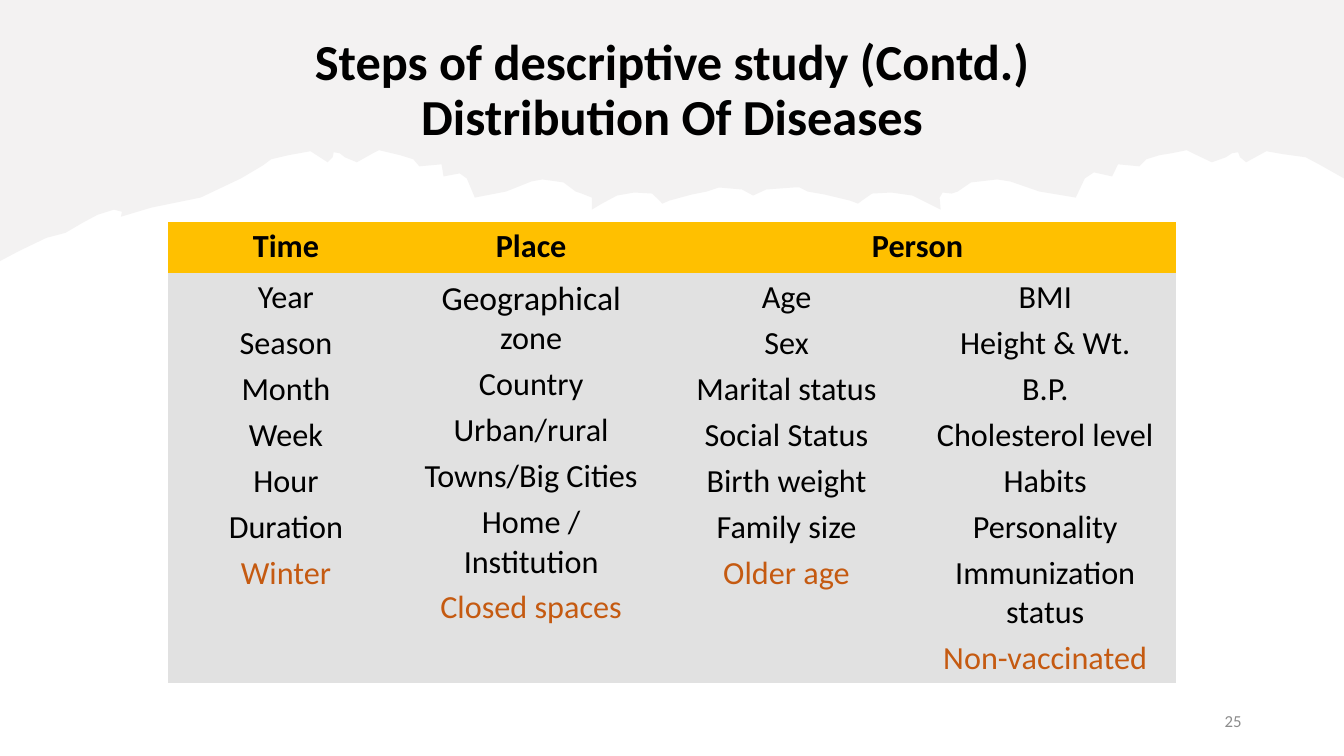
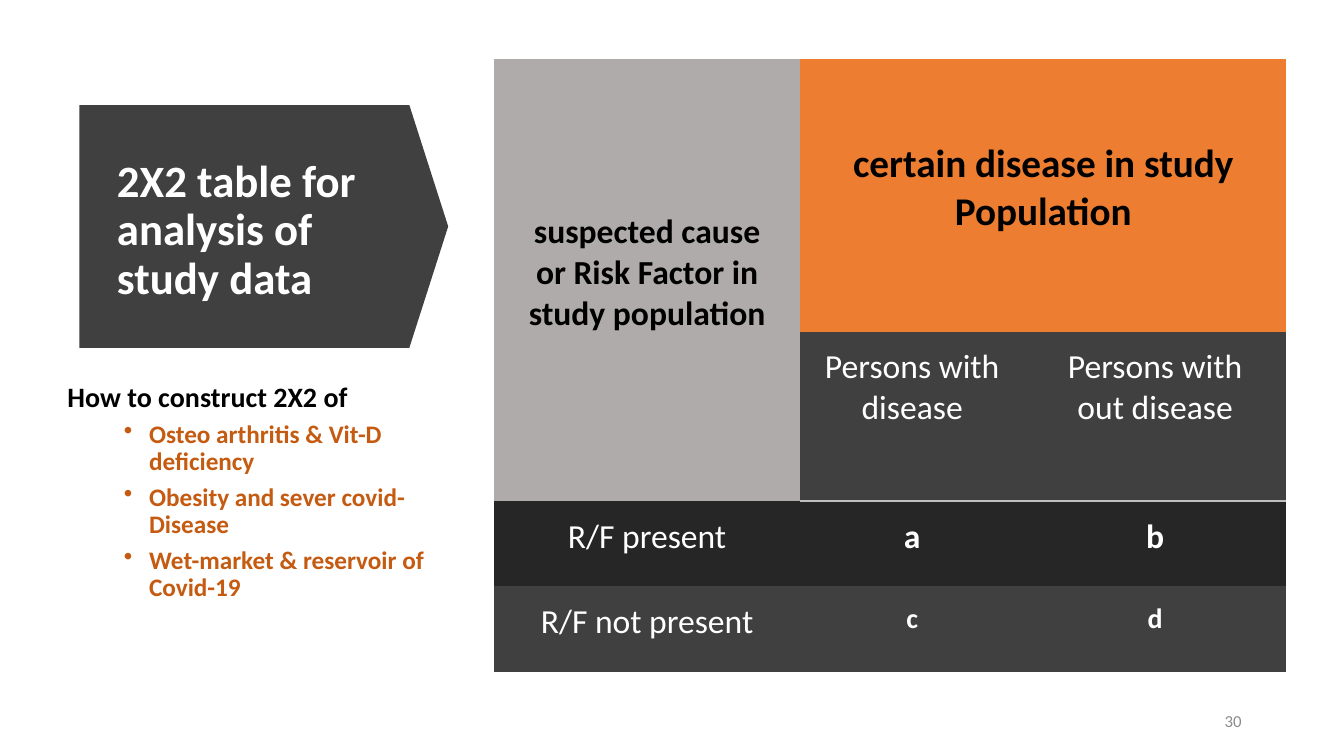
import pptx
import pptx.dml.color
import pptx.enum.shapes
import pptx.enum.text
import pptx.oxml
import pptx.oxml.ns
import pptx.util

RGBColor = pptx.dml.color.RGBColor
BLACK = RGBColor(0x00, 0x00, 0x00)
WHITE = RGBColor(0xFF, 0xFF, 0xFF)
MIST = RGBColor(0xF3, 0xF2, 0xF2)
SILVER = RGBColor(0xE1, 0xE1, 0xE1)
WARM_GREY = RGBColor(0xAF, 0xAB, 0xAB)
NUMBER_GREY = RGBColor(0x8C, 0x8C, 0x8C)
CHARCOAL = RGBColor(0x40, 0x40, 0x40)
COAL = RGBColor(0x26, 0x26, 0x26)
RULE_GREY = RGBColor(0xBF, 0xBF, 0xBF)
GOLD = RGBColor(0xFF, 0xC0, 0x00)
ORANGE = RGBColor(0xED, 0x7D, 0x31)
RUST = RGBColor(0xC5, 0x5A, 0x11)

FONT = "Calibri"
LEFT = pptx.enum.text.PP_ALIGN.LEFT
CENTER = pptx.enum.text.PP_ALIGN.CENTER
RIGHT = pptx.enum.text.PP_ALIGN.RIGHT
TOP = pptx.enum.text.MSO_ANCHOR.TOP
MIDDLE = pptx.enum.text.MSO_ANCHOR.MIDDLE
NO_TABLE_STYLE = "{2D5ABB26-0587-4C30-8999-92F81FD0307C}"

deck = pptx.Presentation()
deck.slide_width = pptx.util.Inches(13.33)
deck.slide_height = pptx.util.Inches(7.5)
title_only = deck.slide_layouts[5]


def area(left, top, width, height):
    """Turn percentages of the slide's size into lengths."""
    across, down = deck.slide_width / 100, deck.slide_height / 100
    return [pptx.util.Emu(round(share * unit)) for share, unit in
            ((left, across), (top, down), (width, across), (height, down))]


def write(frame, lines, size, colour, bold=False, align=LEFT, spacing=1.0):
    frame.text = "\n".join(lines)
    for para in frame.paragraphs:
        para.alignment = align
        para.line_spacing = spacing
        para.font.name = FONT
        para.font.size = pptx.util.Pt(size)
        para.font.bold = bold
        para.font.color.rgb = colour


# Titles and slide numbers
pages = []
for heading, place, size, colour, align, number in (
    ("Steps of descriptive study (Contd.)\vDistribution Of Diseases",
     (6.9, 5.33, 86.25, 13.6), 36, BLACK, CENTER, "25"),
    ("2X2 table for analysis of study data",
     (7.95, 17.6, 21.9, 26), 32, WHITE, LEFT, "30"),
):
    page = deck.slides.add_slide(title_only)
    title = page.shapes.title
    title.left, title.top, title.width, title.height = area(*place)
    write(title.text_frame, [heading], size, colour, True, align, 0.9)
    title.text_frame.word_wrap = True
    title.text_frame.auto_size = pptx.enum.text.MSO_AUTO_SIZE.NONE
    title.text_frame.vertical_anchor = MIDDLE

    box = page.shapes.add_textbox(*area(70.63, 92.67, 22.5, 5.33))
    write(box.text_frame, [number], 12, NUMBER_GREY, align=RIGHT)
    box.text_frame.word_wrap = True
    box.text_frame.vertical_anchor = MIDDLE
    pages.append(page)
disease_page, analysis_page = pages

# Torn paper edge, in hundredths of an inch
TORN_EDGE = [
    (19, 249), (46, 236), (65, 231), (82, 221), (97, 213), (113, 208),
    (121, 210), (120, 215), (150, 206), (199, 196), (239, 177), (261, 164),
    (269, 158), (286, 154), (308, 150), (325, 161), (330, 156), (331, 151),
    (337, 152), (342, 156), (354, 161), (370, 152), (376, 149), (397, 154),
    (410, 158), (416, 165), (438, 163), (440, 175), (456, 172), (463, 177),
    (471, 196), (502, 190), (527, 180), (538, 178), (559, 181), (571, 190),
    (577, 192), (587, 196), (587, 208), (597, 202), (612, 194), (629, 191),
    (647, 192), (654, 199), (657, 202), (664, 199), (686, 193), (701, 190),
    (713, 186), (736, 188), (747, 194), (760, 188), (787, 186), (793, 186),
    (801, 190), (818, 193), (843, 199), (851, 202), (855, 199), (865, 192),
    (884, 191), (905, 194), (921, 202), (933, 208), (932, 196), (935, 191),
    (944, 192), (950, 190), (963, 181), (989, 178), (1002, 180), (1031, 190),
    (1067, 196), (1076, 177), (1085, 171), (1103, 175), (1109, 163),
    (1130, 165), (1137, 158), (1150, 154), (1162, 152), (1177, 149),
    (1183, 152), (1202, 161), (1216, 156), (1222, 152), (1228, 151),
    (1230, 156), (1236, 161), (1256, 150), (1273, 153), (1295, 156),
    (1310, 164), (1333, 177),
]
outline = disease_page.shapes.build_freeform(0, 259, scale=pptx.util.Inches(0.01))
outline.add_line_segments(TORN_EDGE + [(1333, 0), (0, 0)], close=True)
torn_paper = outline.convert_to_shape()
torn_paper.shadow.inherit = False
torn_paper.fill.solid()
torn_paper.fill.fore_color.rgb = MIST
torn_paper.line.fill.background()
disease_page.shapes.title.element.addprevious(torn_paper.element)

# Arrow behind the second title
arrow = analysis_page.shapes.add_shape(
    pptx.enum.shapes.MSO_SHAPE.PENTAGON, *area(5.9, 13.9, 27.45, 32.1))
arrow.adjustments[0] = 0.16
arrow.shadow.inherit = False
arrow.fill.solid()
arrow.fill.fore_color.rgb = CHARCOAL
arrow.line.fill.background()
analysis_page.shapes.title.element.addprevious(arrow.element)

# Exercise list
exercise = analysis_page.shapes.add_textbox(*area(4.28, 50, 28.35, 42)).text_frame
exercise.word_wrap = True
write(exercise, [
    "How to construct 2X2 of",
    "Osteo arthritis & Vit-D deficiency",
    "Obesity and sever covid-Disease",
    "Wet-market & reservoir of Covid-19",
], 18, RUST, True, spacing=0.9)
for para in exercise.paragraphs:
    para.space_after = pptx.util.Pt(6)
exercise.paragraphs[0].font.size = pptx.util.Pt(20)
exercise.paragraphs[0].font.color.rgb = BLACK
for para in exercise.paragraphs[1:]:
    para.level = 1
    properties = para.font._element.getparent()
    properties.set("marL", str(pptx.util.Inches(0.81)))
    properties.set("indent", str(pptx.util.Inches(-0.25)))
    properties.find(pptx.oxml.ns.qn("a:defRPr")).addprevious(pptx.oxml.parse_xml(
        f'<a:buChar {pptx.oxml.ns.nsdecls("a")} char="•"/>'))

# Tables: each cell is row, column, rows, columns, lines, size, bold, colour, fill
DISEASE_CELLS = [
    (0, 0, 1, 1, ["Time"], 23, True, BLACK, GOLD),
    (0, 1, 1, 1, ["Place"], 23, True, BLACK, GOLD),
    (0, 2, 1, 2, ["Person"], 23, True, BLACK, GOLD),
]
for column, lines in enumerate((
    ["Year", "Season", "Month", "Week", "Hour", "Duration", "Winter"],
    ["Geographical zone", "Country", "Urban/rural", "Towns/Big Cities",
     "Home / Institution", "Closed spaces"],
    ["Age", "Sex", "Marital status", "Social Status", "Birth weight",
     "Family size", "Older age"],
    ["BMI", "Height & Wt.", "B.P.", "Cholesterol level", "Habits",
     "Personality", "Immunization status", "Non-vaccinated"],
)):
    DISEASE_CELLS.append((1, column, 1, 1, lines, 23, False, BLACK, SILVER))

ANALYSIS_CELLS = [
    (0, 0, 2, 1, ["suspected cause or Risk Factor in study population"],
     24, True, BLACK, WARM_GREY),
    (0, 1, 1, 2, ["certain disease in study Population"], 28, True, BLACK, ORANGE),
    (1, 1, 1, 1, ["Persons with disease"], 24, False, WHITE, CHARCOAL),
    (1, 2, 1, 1, ["Persons with out disease"], 24, False, WHITE, CHARCOAL),
    (2, 0, 1, 1, ["R/F present"], 24, False, WHITE, COAL),
    (2, 1, 1, 1, ["a"], 24, True, WHITE, COAL),
    (2, 2, 1, 1, ["b"], 24, True, WHITE, COAL),
    (3, 0, 1, 1, ["R/F not present"], 24, False, WHITE, CHARCOAL),
    (3, 1, 1, 1, ["c"], 20, True, WHITE, CHARCOAL),
    (3, 2, 1, 1, ["d"], 20, True, WHITE, CHARCOAL),
]

tables = []
for page, left, top, widths, heights, cells in (
    (disease_page, 12.53, 29.33, (17.5, 19, 19, 19.5), (6.8, 54.2), DISEASE_CELLS),
    (analysis_page, 36.75, 7.87, (22.8, 16.65, 19.5), (36, 22.4, 11.3, 11.3),
     ANALYSIS_CELLS),
):
    table = page.shapes.add_table(
        len(heights), len(widths), *area(left, top, sum(widths), sum(heights))).table
    table.first_row = table.horz_banding = False
    table._tbl.tblPr.find(pptx.oxml.ns.qn("a:tableStyleId")).text = NO_TABLE_STYLE
    for column, width in zip(table.columns, widths):
        column.width = area(0, 0, width, 0)[2]
    for row, height in zip(table.rows, heights):
        row.height = area(0, 0, 0, height)[3]
    for row, column, rows, columns, lines, size, bold, colour, fill in cells:
        cell = table.cell(row, column)
        if rows * columns > 1:
            cell.merge(table.cell(row + rows - 1, column + columns - 1))
        write(cell.text_frame, lines, size, colour, bold, CENTER)
        cell.fill.solid()
        cell.fill.fore_color.rgb = fill
        if page is analysis_page:
            is_heading = rows * columns > 1
            side = pptx.util.Inches(0.3 if is_heading else 0.2)
            cell.margin_left = cell.margin_right = cell.margin_bottom = side
            cell.margin_top = pptx.util.Inches(0.15)
            cell.vertical_anchor = MIDDLE if is_heading else TOP
    tables.append(table)
disease_table, analysis_table = tables

# Examples close each list of factors
for cell in disease_table.rows[1].cells:
    for para in cell.text_frame.paragraphs:
        para.space_before = pptx.util.Pt(4.6)
    cell.text_frame.paragraphs[-1].font.color.rgb = RUST
para = disease_table.cell(1, 1).text_frame.paragraphs[0]
para.runs[0].text = "Geographical"
para.runs[0].font.size = pptx.util.Pt(24)
para.add_run().text = " zone"

# Rule between column headings and counts
for column in (1, 2):
    cell_properties = analysis_table.cell(1, column)._tc.get_or_add_tcPr()
    cell_properties.insert(0, pptx.oxml.parse_xml(
        f'<a:lnB {pptx.oxml.ns.nsdecls("a")} w="{pptx.util.Pt(1)}"><a:solidFill>'
        f'<a:srgbClr val="{RULE_GREY}"/></a:solidFill></a:lnB>'))

deck.save("out.pptx")
